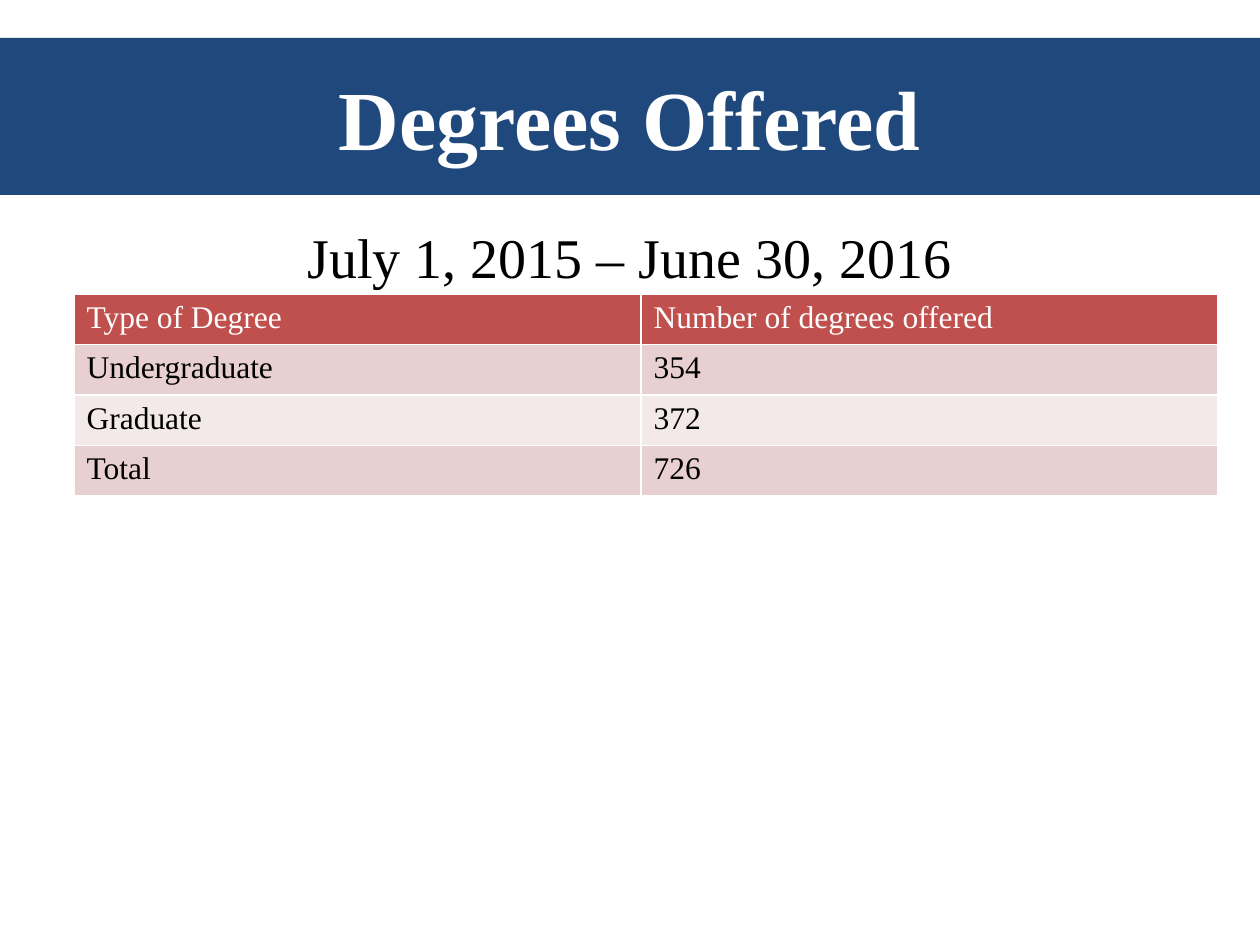
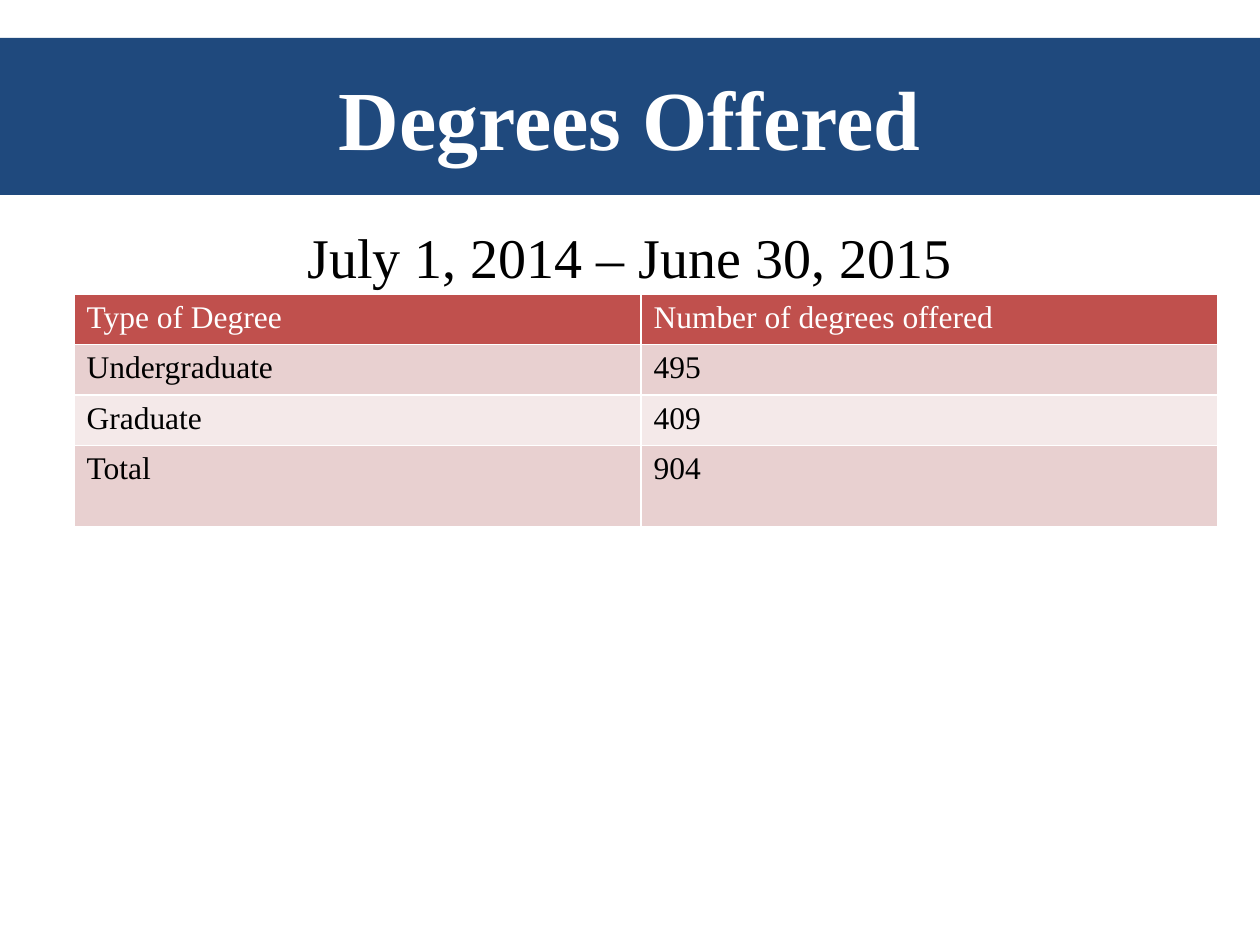
from lxml import etree
from pptx import Presentation
from pptx.dml.color import RGBColor
from pptx.enum.shapes import MSO_SHAPE
from pptx.enum.text import MSO_ANCHOR, PP_ALIGN
from pptx.oxml.ns import qn
from pptx.util import Emu, Pt

TITLE = "Degrees Offered"
HEADER = ("Type of Degree", "Number of degrees offered")
YEARS = [
    {
        "period": "July 1, 2015 – June 30, 2016",
        "degrees": [("Undergraduate", "354"), ("Graduate", "372"), ("Total", "726")],
        "row_heights": (47, 47, 47, 47),
    },
    {
        "period": "July 1, 2014 – June 30, 2015",
        "degrees": [("Undergraduate", "495"), ("Graduate", "409"), ("Total", "904")],
        "row_heights": (49, 49, 49, 81),
    },
]

COLORS = {
    "band": "1F497D",
    "header": "C0504D",
    "odd_row": "E8D0D0",
    "even_row": "F4E9E9",
    "white": "FFFFFF",
    "black": "000000",
}
FONT = "Times New Roman"
PX = 914400 // 126
SLIDE_W, SLIDE_H = 1260, 945
BAND = (0, 38, SLIDE_W, 157)
PERIOD = (0, 210, SLIDE_W, 220)
PERIOD_INSET = 13
TABLE_LEFT, TABLE_TOP = 74, 294
COLUMN_WIDTHS = (567, 577)

RECT = MSO_SHAPE.RECTANGLE
MIDDLE, TOP = MSO_ANCHOR.MIDDLE, MSO_ANCHOR.TOP
LEFT, CENTER = PP_ALIGN.LEFT, PP_ALIGN.CENTER


def px(*lengths):
    return [Emu(n * PX) for n in lengths]


def rgb(name):
    return RGBColor.from_string(COLORS[name])


def write(tf, text, size=18, color="black", bold=False, align=LEFT, anchor=TOP):
    tf.word_wrap = True
    tf.vertical_anchor = anchor
    p = tf.paragraphs[0]
    p.alignment = align
    r = p.add_run()
    r.text = text
    r.font.name = FONT
    r.font.size = Pt(size)
    r.font.bold = bold
    r.font.color.rgb = rgb(color)


def add_title_band(slide):
    sp = slide.shapes.add_shape(RECT, *px(*BAND))
    sp.shadow.inherit = False
    sp.fill.solid()
    sp.fill.fore_color.rgb = rgb("band")
    sp.line.fill.background()
    write(sp.text_frame, TITLE, size=48, color="white", bold=True,
          align=CENTER, anchor=MIDDLE)


def add_period(slide, period):
    tf = slide.shapes.add_textbox(*px(*PERIOD)).text_frame
    tf.margin_top = px(PERIOD_INSET)[0]
    write(tf, period, size=32, align=CENTER)


def fill_cell(cell, name):
    """Give a cell its fill and thin white borders, which must precede the fill."""
    cell.fill.solid()
    cell.fill.fore_color.rgb = rgb(name)
    tcPr = cell._tc.get_or_add_tcPr()
    for i, side in enumerate(("lnL", "lnR", "lnT", "lnB")):
        ln = etree.Element(qn(f"a:{side}"), w=str(Pt(1)))
        solid = etree.SubElement(ln, qn("a:solidFill"))
        etree.SubElement(solid, qn("a:srgbClr"), val=COLORS["white"])
        tcPr.insert(i, ln)


def add_degree_table(slide, degrees, row_heights):
    rows = [HEADER, *degrees]
    frame = slide.shapes.add_table(
        len(rows), len(HEADER),
        *px(TABLE_LEFT, TABLE_TOP, sum(COLUMN_WIDTHS), sum(row_heights)))
    table = frame.table
    table.first_row = table.horz_banding = False
    for column, width in zip(table.columns, px(*COLUMN_WIDTHS)):
        column.width = width
    for row, height in zip(table.rows, px(*row_heights)):
        row.height = height
    for i, texts in enumerate(rows):
        fill = "header" if i == 0 else "odd_row" if i % 2 else "even_row"
        for j, text in enumerate(texts):
            cell = table.cell(i, j)
            fill_cell(cell, fill)
            write(cell.text_frame, text, color="black" if i else "white")


def main():
    prs = Presentation()
    prs.slide_width, prs.slide_height = px(SLIDE_W, SLIDE_H)
    blank = prs.slide_layouts[6]
    for year in YEARS:
        slide = prs.slides.add_slide(blank)
        add_title_band(slide)
        add_period(slide, year["period"])
        add_degree_table(slide, year["degrees"], year["row_heights"])
    prs.save("out.pptx")


if __name__ == "__main__":
    main()
